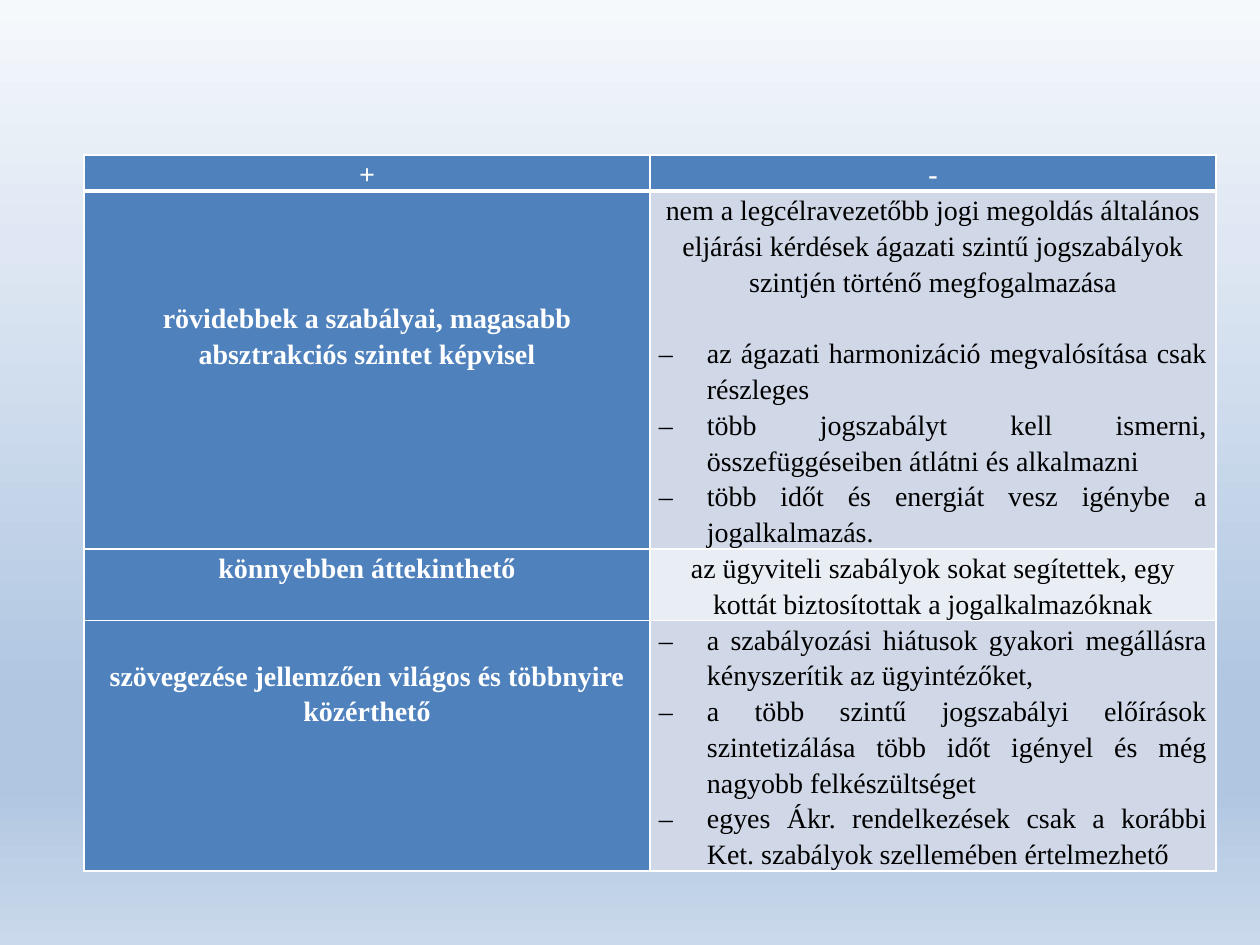
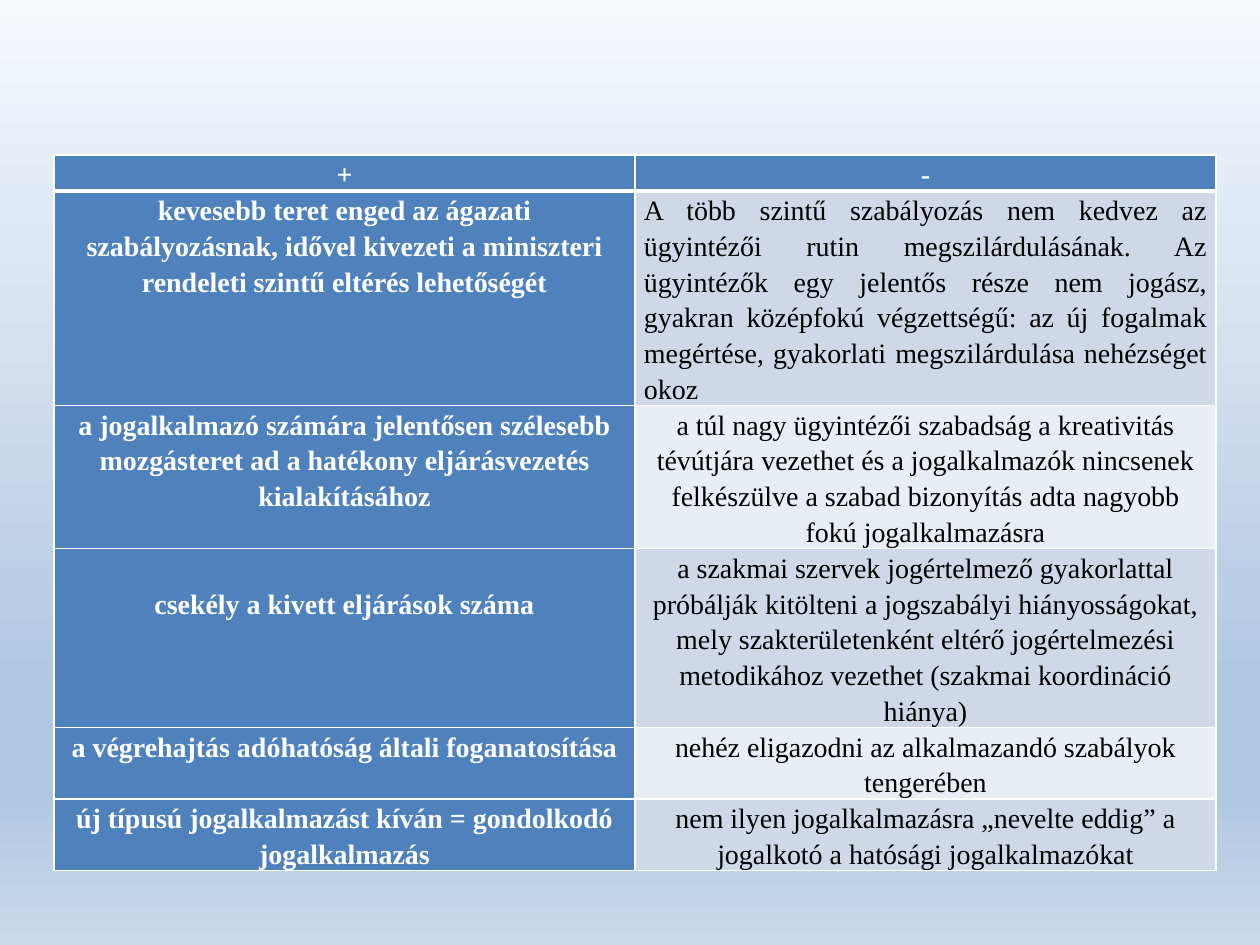
from lxml.etree import SubElement
from pptx import Presentation
from pptx.dml.color import RGBColor
from pptx.enum.text import MSO_ANCHOR, PP_ALIGN
from pptx.oxml.ns import qn
from pptx.util import Pt

TABLES = [
    {
        "left": 84,
        "column": 566,
        "rows": [
            (10, 3, "rövidebbek a szabályai, magasabb absztrakciós szintet képvisel", [
                ("center", "nem a legcélravezetőbb jogi megoldás általános eljárási kérdések "
                           "ágazati szintű jogszabályok szintjén történő megfogalmazása"),
                ("dash", "az ágazati harmonizáció megvalósítása csak részleges"),
                ("dash", "több jogszabályt kell ismerni, összefüggéseiben átlátni és alkalmazni"),
                ("dash", "több időt és energiát vesz igénybe a jogalkalmazás."),
            ]),
            (2, 0, "könnyebben áttekinthető", [
                ("center", "az ügyviteli szabályok sokat segítettek, egy kottát biztosítottak "
                           "a jogalkalmazóknak"),
            ]),
            (7, 1, "szövegezése jellemzően világos és többnyire közérthető", [
                ("dash", "a szabályozási hiátusok gyakori megállásra kényszerítik az ügyintézőket,"),
                ("dash", "a több szintű jogszabályi előírások szintetizálása több időt igényel "
                         "és még nagyobb felkészültséget"),
                ("dash", "egyes Ákr. rendelkezések csak a korábbi Ket. szabályok szellemében "
                         "értelmezhető"),
            ]),
        ],
    },
    {
        "left": 54,
        "column": 581,
        "rows": [
            (6, 0, "kevesebb teret enged az ágazati szabályozásnak, idővel kivezeti a miniszteri "
                   "rendeleti szintű eltérés lehetőségét", [
                ("justify", "A több szintű szabályozás nem kedvez az ügyintézői rutin "
                            "megszilárdulásának. Az ügyintézők egy jelentős része nem jogász, "
                            "gyakran középfokú végzettségű: az új fogalmak megértése, gyakorlati "
                            "megszilárdulása nehézséget okoz"),
            ]),
            (4, 0, "a jogalkalmazó számára jelentősen szélesebb mozgásteret ad a hatékony "
                   "eljárásvezetés kialakításához", [
                ("center", "a túl nagy ügyintézői szabadság a kreativitás tévútjára vezethet és a "
                           "jogalkalmazók nincsenek felkészülve a szabad bizonyítás adta nagyobb "
                           "fokú jogalkalmazásra"),
            ]),
            (5, 1, "csekély a kivett eljárások száma", [
                ("center", "a szakmai szervek jogértelmező gyakorlattal próbálják kitölteni a "
                           "jogszabályi hiányosságokat, mely szakterületenként eltérő "
                           "jogértelmezési metodikához vezethet (szakmai koordináció hiánya)"),
            ]),
            (2, 0, "a végrehajtás adóhatóság általi foganatosítása", [
                ("center", "nehéz eligazodni az alkalmazandó szabályok tengerében"),
            ]),
            (2, 0, "új típusú jogalkalmazást kíván = gondolkodó jogalkalmazás", [
                ("center", "nem ilyen jogalkalmazásra „nevelte eddig” a jogalkotó a hatósági "
                           "jogalkalmazókat"),
            ]),
        ],
    },
]
HEADINGS = ("+", "-")
BACKGROUND = [(0, "F6F9FC"), (26, "DEE7F3"), (74, "B0C6E1"), (83, "B0C6E1"), (100, "CAD9EB")]
ACCENT, WHITE, BLACK = "4F81BD", "FFFFFF", "000000"
BANDS = ("D0D8E8", "E9EDF4")
FONT, SIZE, SPACING = "Times New Roman", 16, 1.15
TOP, LINE, INSET, INDENT = 155, 35, 9, 48
GAP = 36
THIN, THICK = 1, 3


def px(length):
    return round(length * 914400 / 126)


def color(value):
    return RGBColor.from_string(value)


def paint_background(page):
    fill = page.background.fill
    fill.gradient()
    fill.gradient_angle = 270
    stops = next(page.element.iter(qn("a:gsLst")))
    for stop in list(stops):
        stops.remove(stop)
    for position, value in BACKGROUND:
        stop = SubElement(stops, qn("a:gs"), pos=str(position * 1000))
        SubElement(stop, qn("a:srgbClr"), val=value)


def add_borders(cell, top, bottom):
    properties = cell._tc.get_or_add_tcPr()
    for side, width in (("L", THIN), ("R", THIN), ("T", top), ("B", bottom)):
        line = SubElement(properties, qn(f"a:ln{side}"), w=str(Pt(width)))
        fill = SubElement(line, qn("a:solidFill"))
        SubElement(fill, qn("a:srgbClr"), val=WHITE)


def add_dash(para):
    properties = para._p.get_or_add_pPr()
    properties.set("marL", str(px(INDENT)))
    properties.set("indent", str(-px(INDENT)))
    SubElement(properties, qn("a:buFont"), typeface=FONT)
    SubElement(properties, qn("a:buChar"), char="‒")


def fill_cell(cell, lines, fill, ink, bold, gap=0, top=THIN, bottom=THIN):
    add_borders(cell, top, bottom)
    cell.fill.solid()
    cell.fill.fore_color.rgb = color(fill)
    cell.margin_left = cell.margin_right = px(INSET)
    cell.margin_top, cell.margin_bottom = px(gap * GAP), 0
    cell.vertical_anchor = MSO_ANCHOR.TOP
    frame = cell.text_frame
    previous = None
    for kind, text in lines:
        para = frame.add_paragraph() if previous else frame.paragraphs[0]
        para.alignment = PP_ALIGN.CENTER if kind == "center" else PP_ALIGN.JUSTIFY
        para.line_spacing = SPACING
        if previous == "center" and kind == "dash":
            para.space_before = px(GAP)
        if kind == "dash":
            add_dash(para)
        span = para.add_run()
        span.text = text
        span.font.name, span.font.size, span.font.bold = FONT, Pt(SIZE), bold
        span.font.color.rgb = color(ink)
        previous = kind


def add_comparison(page, left, column, rows):
    heights = [LINE] + [count * LINE for count, *_ in rows]
    frame = page.shapes.add_table(len(heights), 2, px(left), px(TOP), px(2 * column), px(sum(heights)))
    table = frame.table
    table.horz_banding = table.first_row = False
    for part in table.columns:
        part.width = px(column)
    for row, height in zip(table.rows, heights):
        row.height = px(height)
    for index, heading in enumerate(HEADINGS):
        fill_cell(table.cell(0, index), [("center", heading)], ACCENT, WHITE, True, bottom=THICK)
    for index, (_, gap, advantage, drawbacks) in enumerate(rows):
        top = THIN if index else THICK
        fill_cell(table.cell(index + 1, 0), [("center", advantage)], ACCENT, WHITE, True, gap, top)
        fill_cell(table.cell(index + 1, 1), drawbacks, BANDS[index % 2], BLACK, False, top=top)


def main():
    deck = Presentation()
    deck.slide_width, deck.slide_height = px(1260), px(945)
    for content in TABLES:
        page = deck.slides.add_slide(deck.slide_layouts[6])
        paint_background(page)
        add_comparison(page, **content)
    deck.save("out.pptx")


if __name__ == "__main__":
    main()
